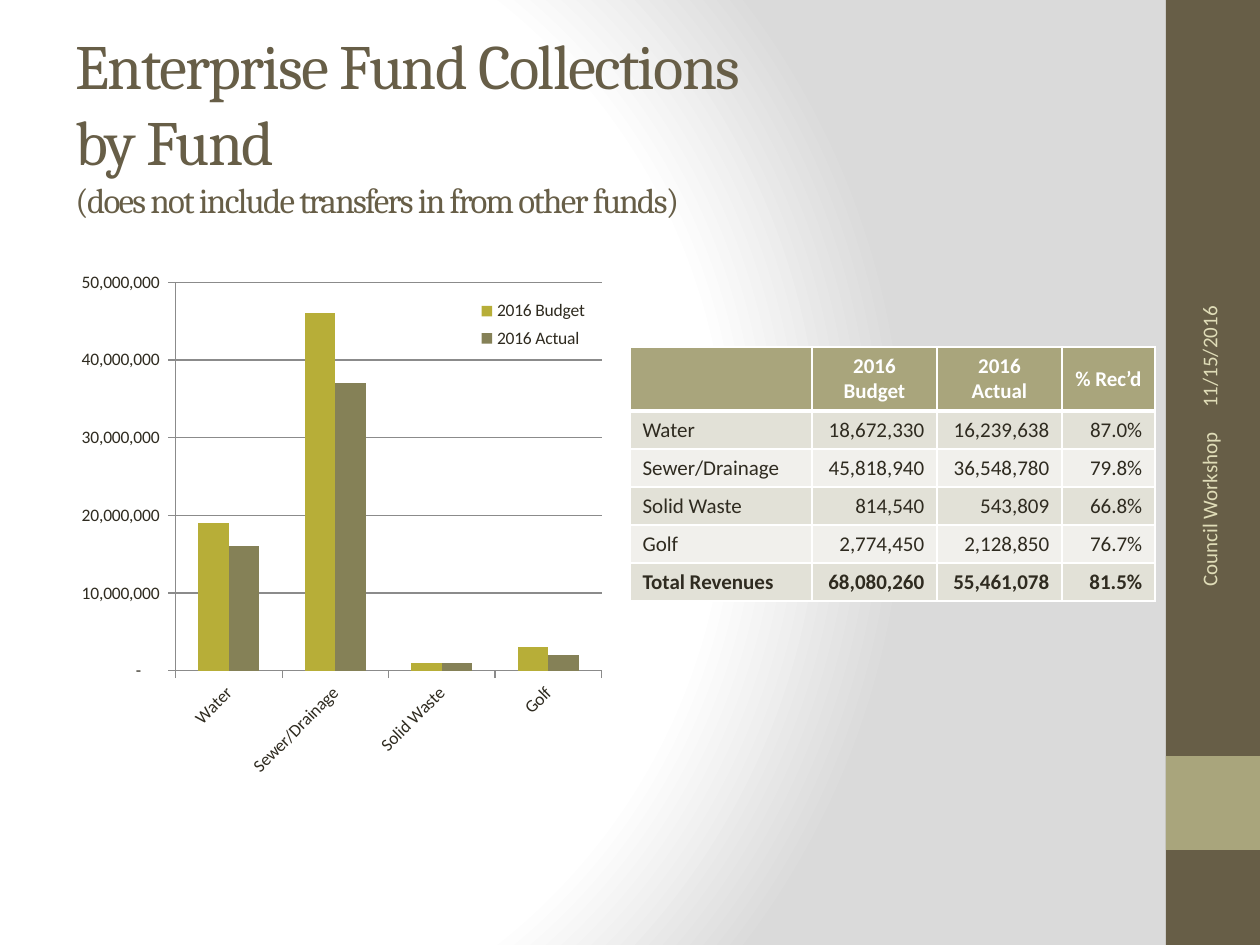
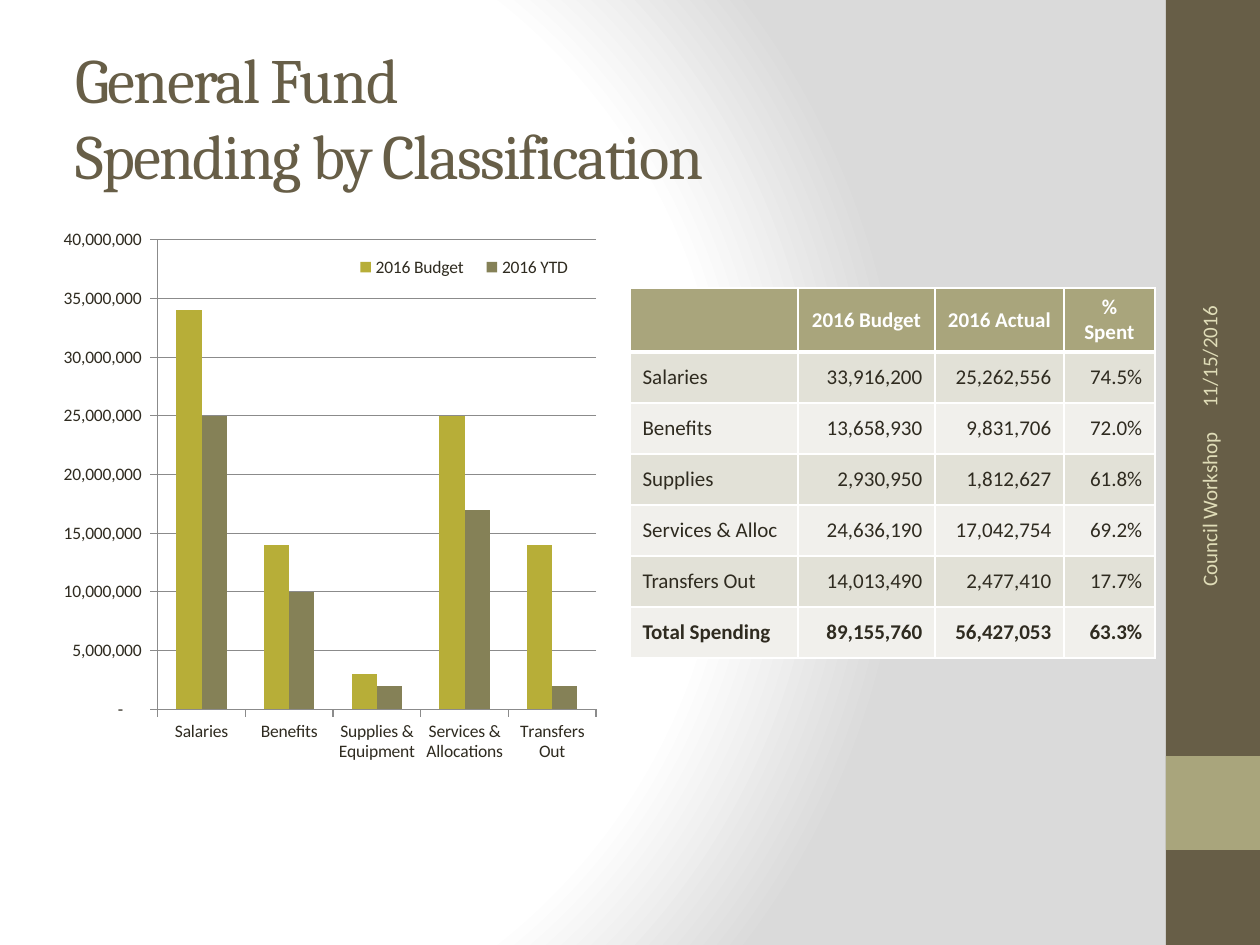
from pptx import Presentation
from pptx import oxml
from pptx import util as u
from pptx.chart.data import CategoryChartData
from pptx.dml.color import RGBColor
from pptx.enum import chart as charts, shapes, text
from pptx.oxml import ns

LEFT, CENTRE, RIGHT = text.PP_ALIGN.LEFT, text.PP_ALIGN.CENTER, text.PP_ALIGN.RIGHT
ACCOUNTING = '_(* #,##0_);_(* \\(#,##0\\);_(* "-"??_);_(@_)'


def px(length):
    return u.Emu(round(length * 914400 / 126))


def colour(hex_code):
    return RGBColor.from_string(hex_code)


def to_millions(amount):
    return round(int(amount.replace(",", "")), -6)


def write(frame, words, size=12, ink="2F2B20", font="Calibri", bold=False,
          align=LEFT, spacing=0, last_size=None):
    paragraph = frame.paragraphs[0]
    paragraph.text = words
    paragraph.alignment = align
    for run in paragraph.runs:
        run.font.name = font
        run.font.size = u.Pt(size)
        run.font.bold = bold
        run.font.color.rgb = colour(ink)
        if spacing:
            run.font._element.set("spc", str(spacing * 100))
    if last_size:
        paragraph.runs[-1].font.size = u.Pt(last_size)


def place(part, index, box, inner=False):
    for old in part.findall(ns.qn("c:layout")):
        part.remove(old)
    target = '<c:layoutTarget val="inner"/>' if inner else ""
    modes = "".join(f'<c:{side}Mode val="edge"/>' for side in "xy")
    values = "".join(f'<c:{key} val="{value}"/>' for key, value in zip("xywh", box))
    part.insert(index, oxml.parse_xml(
        f'<c:layout {ns.nsdecls("c")}><c:manualLayout>{target}{modes}{values}'
        '</c:manualLayout></c:layout>'))


class Deck:
    OLIVE, SAGE, CREAM, INK, WHITE = "675E47", "A9A57C", "DFDCB7", "2F2B20", "FFFFFF"
    BANDS = "F1F0EC", "E2E1D7"
    SERIES = "B7AE38", "858157"
    RULE = "8B8B8B"

    def __init__(self):
        self.prs = Presentation()
        self.prs.slide_width, self.prs.slide_height = px(1260), px(945)
        self.slide = None

    def new_slide(self, title, title_height, last_size=None):
        self.slide = self.prs.slides.add_slide(self.prs.slide_layouts[6])
        self.background()
        self.band(0, 945, self.OLIVE)
        self.band(756, 94, self.SAGE)
        self.label((63, 37, 1050, title_height), title, size=36, ink=self.OLIVE,
                   font="Cambria", spacing=-1, last_size=last_size)
        self.label((1041, 227, 336, 50), "11/15/2016", turn=270, ink=self.CREAM)
        self.label((1046, 558, 326, 50), "Council Workshop", turn=270,
                   ink=self.CREAM, align=RIGHT)

    def background(self):
        stops = "".join(
            f'<a:gs pos="{at * 1000}"><a:srgbClr val="{shade}"/></a:gs>'
            for at, shade in ((0, self.WHITE), (75, self.WHITE), (100, "DADADA")))
        self.slide.element.cSld.insert(0, oxml.parse_xml(
            f'<p:bg {ns.nsdecls("p", "a")}><p:bgPr><a:gradFill rotWithShape="1">'
            f'<a:gsLst>{stops}</a:gsLst><a:path path="circle">'
            '<a:fillToRect l="20000" t="50000" r="100000" b="50000"/></a:path>'
            '</a:gradFill><a:effectLst/></p:bgPr></p:bg>'))

    def band(self, top, height, fill):
        bar = self.slide.shapes.add_shape(
            shapes.MSO_SHAPE.RECTANGLE, px(1166), px(top), px(94), px(height))
        bar.shadow.inherit = False
        bar.fill.solid()
        bar.fill.fore_color.rgb = colour(fill)
        bar.line.fill.background()

    def label(self, box, words, turn=0, **style):
        holder = self.slide.shapes.add_textbox(*map(px, box))
        holder.rotation = turn
        frame = holder.text_frame
        frame.word_wrap = True
        frame.vertical_anchor = text.MSO_ANCHOR.MIDDLE
        write(frame, words, **style)

    def table(self, top, columns, row_height, header, rows):
        heights = [64] + [row_height] * len(rows)
        grid = self.slide.shapes.add_table(
            len(heights), len(columns), px(630), px(top),
            px(sum(columns)), px(sum(heights))).table
        grid.first_row = grid.horz_banding = False
        for column, width in zip(grid.columns, columns):
            column.width = px(width)
        for r, (values, height) in enumerate(zip([header] + rows, heights)):
            grid.rows[r].height = px(height)
            for c, value in enumerate(values):
                align = CENTRE if r == 0 else RIGHT if c else LEFT
                self.cell(grid.cell(r, c), value, r, align, bold=r in (0, len(rows)))

    def cell(self, cell, value, row, align, bold):
        cell.vertical_anchor = text.MSO_ANCHOR.MIDDLE
        cell.fill.solid()
        cell.fill.fore_color.rgb = colour(self.BANDS[row % 2] if row else self.SAGE)
        if value:
            write(cell.text_frame, value, align=align, bold=bold,
                  ink=self.INK if row else self.WHITE)
        widths = {"L": 1, "R": 1, "T": 3 if row == 1 else 1, "B": 1 if row else 3}
        for index, (side, width) in enumerate(widths.items()):
            cell._tc.get_or_add_tcPr().insert(index, oxml.parse_xml(
                f'<a:ln{side} {ns.nsdecls("a")} w="{u.Pt(width)}"><a:solidFill>'
                f'<a:srgbClr val="{self.WHITE}"/></a:solidFill></a:ln{side}>'))

    def rule(self, line):
        line.color.rgb = colour(self.RULE)
        line.width = u.Pt(0.75)

    def chart_font(self, font):
        font.name, font.size, font.bold = "Calibri", u.Pt(10), False
        font.color.rgb = colour(self.INK)

    def columns(self, box, categories, names, rows, top_value, step, plot_height,
                legend_side, legend_box, slant=0):
        data = CategoryChartData()
        data.categories = categories
        for c, name in enumerate(names, 1):
            data.add_series(name, [to_millions(row[c]) for row in rows])
        chart = self.slide.shapes.add_chart(
            charts.XL_CHART_TYPE.COLUMN_CLUSTERED, *map(px, box), data).chart
        chart.has_title = False
        self.chart_font(chart.font)
        plot = chart.plots[0]
        plot.gap_width, plot.overlap, plot.vary_by_categories = 150, 0, False
        for series, fill in zip(plot.series, self.SERIES):
            series.format.fill.solid()
            series.format.fill.fore_color.rgb = colour(fill)
        for axis in (chart.category_axis, chart.value_axis):
            axis.major_tick_mark = charts.XL_TICK_MARK.OUTSIDE
            axis.minor_tick_mark = charts.XL_TICK_MARK.NONE
            self.rule(axis.format.line)
            self.chart_font(axis.tick_labels.font)
        if slant:
            body = chart.category_axis._element.find(".//" + ns.qn("a:bodyPr"))
            body.set("rot", str(slant * 60000))
        amounts = chart.value_axis
        amounts.minimum_scale, amounts.maximum_scale = 0, top_value
        amounts.major_unit = step
        amounts.has_major_gridlines = True
        self.rule(amounts.major_gridlines.format.line)
        amounts.tick_labels.number_format = ACCOUNTING
        amounts.tick_labels.number_format_is_linked = False
        chart.has_legend = True
        chart.legend.position = legend_side
        chart.legend.include_in_layout = False
        self.chart_font(chart.legend.font)
        place(chart.legend._element, 1, legend_box)
        plot_area = chart.element.find(".//" + ns.qn("c:plotArea"))
        place(plot_area, 0, (0.19, 0.04, 0.78, plot_height), inner=True)


def enterprise_funds(deck):
    funds = [
        ("Water", "18,672,330", "16,239,638", "87.0%"),
        ("Sewer/Drainage", "45,818,940", "36,548,780", "79.8%"),
        ("Solid Waste", "814,540", "543,809", "66.8%"),
        ("Golf", "2,774,450", "2,128,850", "76.7%"),
    ]
    total = ("Total Revenues", "68,080,260", "55,461,078", "81.5%")
    deck.new_slide("Enterprise Fund Collections\vby Fund\v"
                   "(does not include transfers in from other funds)", 173, last_size=20)
    deck.table(347, (182, 125, 125, 93), 38,
               ("", "2016 Budget", "2016\vActual", "% Rec’d"), funds + [total])
    deck.columns((72, 260, 546, 563), [fund[0] for fund in funds],
                 ("2016 Budget", "2016 Actual"), funds, 50000000, 10000000, 0.69,
                 charts.XL_LEGEND_POSITION.LEFT, (0.73, 0.06, 0.23, 0.11), slant=-45)


def general_fund(deck):
    spending = [
        ("Salaries", "33,916,200", "25,262,556", "74.5%"),
        ("Benefits", "13,658,930", "9,831,706", "72.0%"),
        ("Supplies", "2,930,950", "1,812,627", "61.8%"),
        ("Services & Alloc", "24,636,190", "17,042,754", "69.2%"),
        ("Transfers Out", "14,013,490", "2,477,410", "17.7%"),
    ]
    total = ("Total Spending", "89,155,760", "56,427,053", "63.3%")
    deck.new_slide("General Fund\vSpending by Classification", 158)
    deck.table(288, (168, 137, 129, 91), 51,
               ("", "2016 Budget", "2016 Actual", "% Spent"), spending + [total])
    deck.columns((51, 218, 562, 546),
                 ("Salaries", "Benefits", "Supplies & Equipment",
                  "Services & Allocations", "Transfers Out"),
                 ("2016 Budget", "2016 YTD"), spending, 40000000, 5000000, 0.86,
                 charts.XL_LEGEND_POSITION.BOTTOM, (0.52, 0.06, 0.43, 0.06))


def main():
    deck = Deck()
    enterprise_funds(deck)
    general_fund(deck)
    deck.prs.save("out.pptx")


if __name__ == "__main__":
    main()
